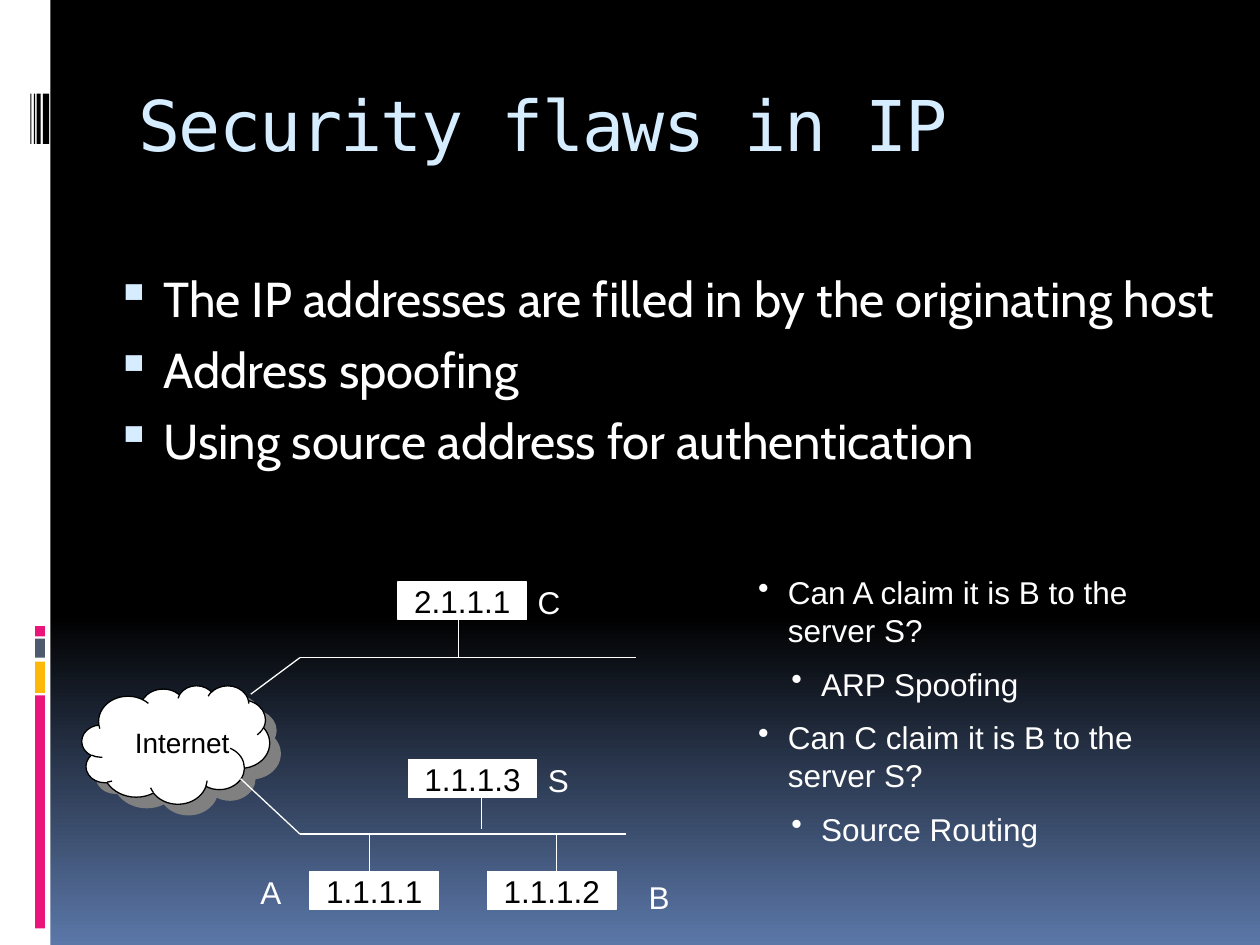
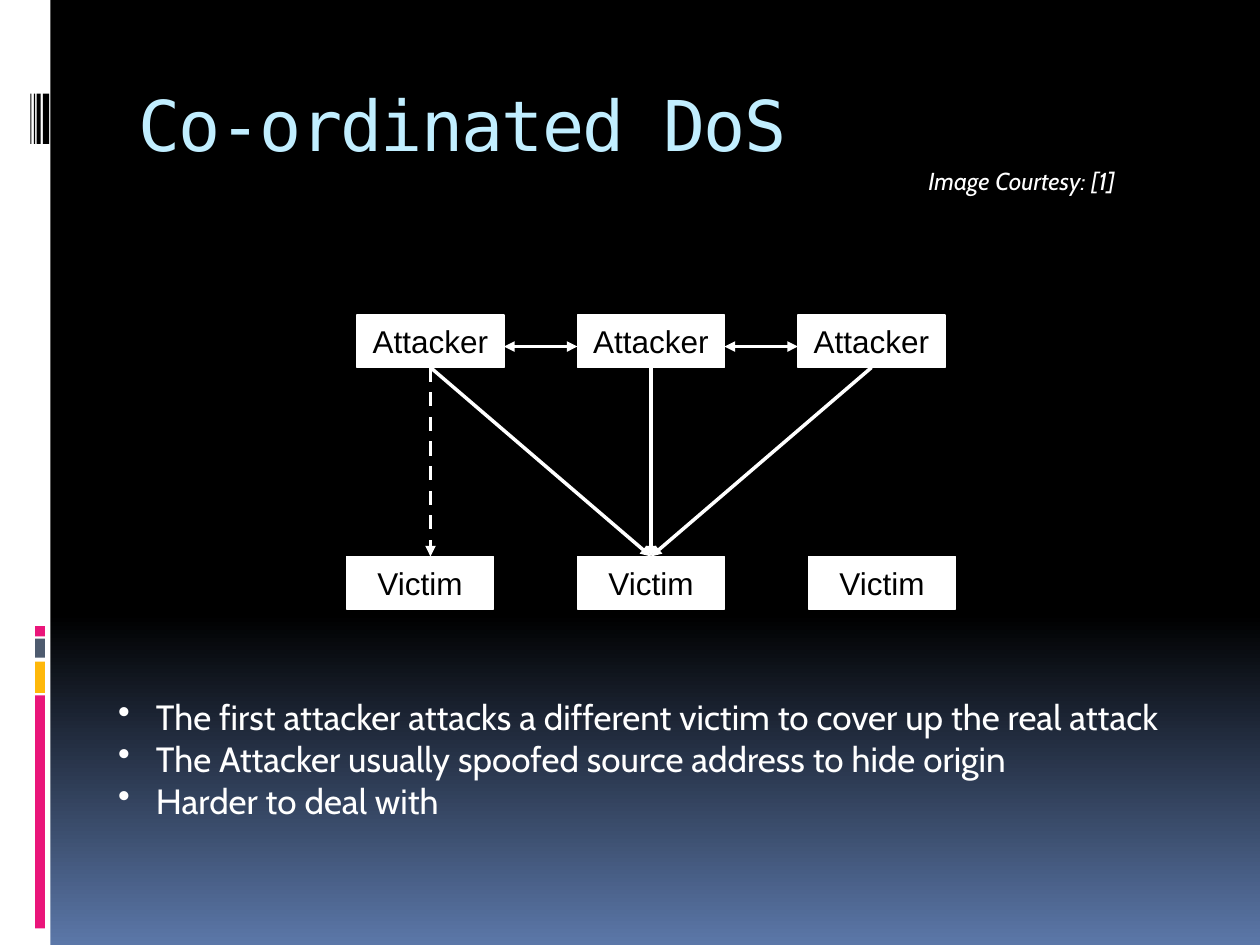
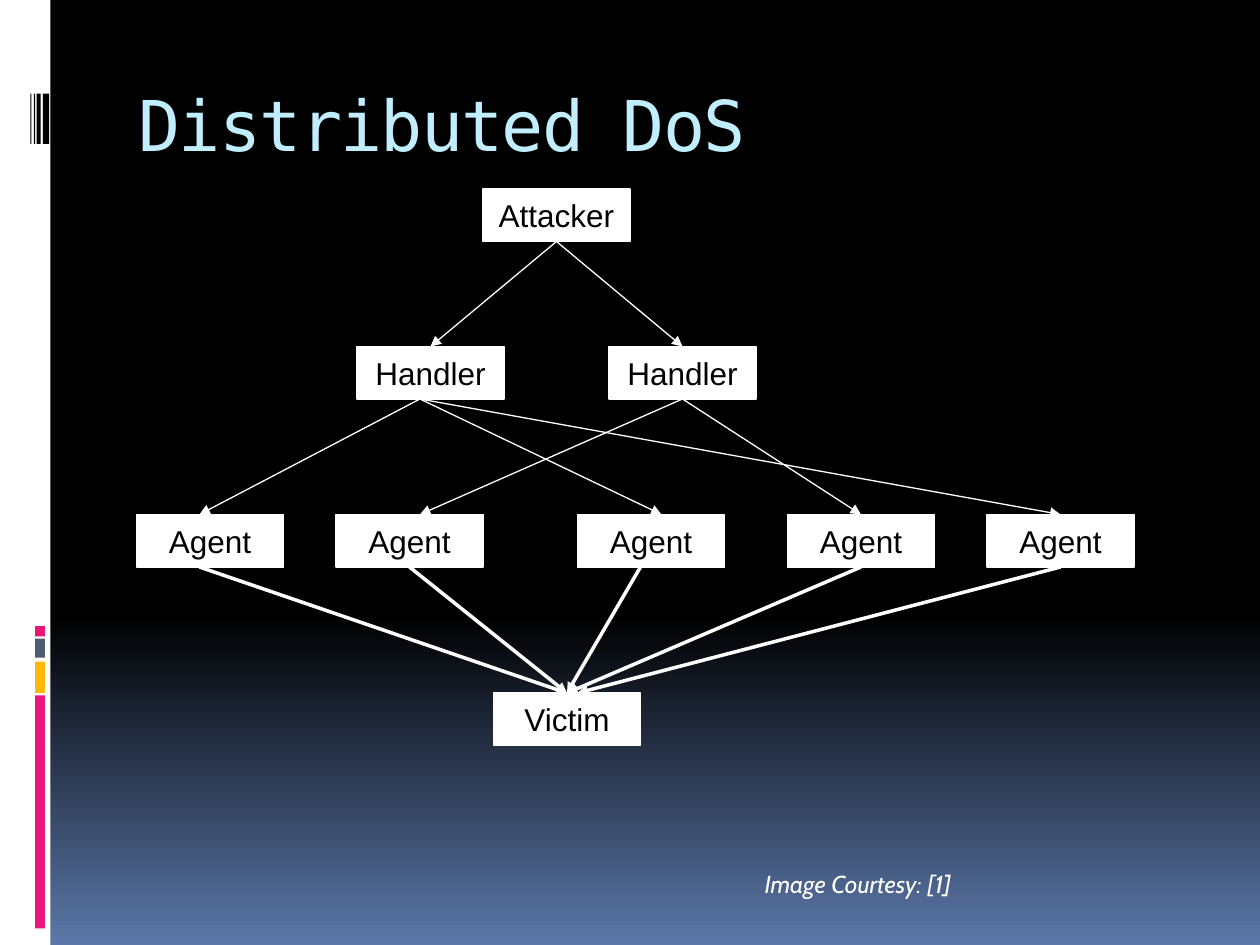
"""Build three slides on IP spoofing and denial-of-service attacks."""
from copy import deepcopy

from pptx import Presentation
from pptx import util as u
from pptx.dml.color import RGBColor
from pptx.enum import dml, shapes, text as t
from pptx.oxml import parse_xml
from pptx.oxml.ns import nsdecls, qn
from pptx.oxml.xmlchemy import OxmlElement

Pt = u.Pt
COLORS = {
    "white": "FFFFFF", "black": "000000", "blue": "5B77A8", "pink": "EA157A",
    "amber": "FEB80A", "slate": "4E5B6F", "ice": "D6ECFF", "sky": "C1EEFF",
    "gray": "808080",
}
RECTANGLE = shapes.MSO_SHAPE.RECTANGLE
NODE = {"fill": "white", "edge": "white", "color": "black", "middle": True,
        "align": t.PP_ALIGN.CENTER}
NODE_SIZE = (84, 30)


def write(page, words, left, top, width, height, box=None, form=RECTANGLE,
          fill=None, edge=None, font="Arial", size=18, color="white",
          italic=False, align=t.PP_ALIGN.LEFT, middle=False, tracking=None,
          bullet=None, bullet_color=None, margin=0, hang=0, step=0, levels=None,
          before=0):
    """Put formatted text in a given box, a filled shape or a new text box."""
    place = [Pt(length) for length in (left, top, width, height)]
    if box is not None:
        box.left, box.top, box.width, box.height = place
    elif fill:
        box = page.shapes.add_shape(form, *place)
        box.shadow.inherit = False
        box.fill.solid()
        box.fill.fore_color.rgb = RGBColor.from_string(COLORS[fill])
        if edge:
            box.line.color.rgb = RGBColor.from_string(COLORS[edge])
            box.line.width = Pt(0.75)
        else:
            box.line.fill.background()
    else:
        box = page.shapes.add_textbox(*place)
    frame = box.text_frame
    frame.word_wrap = True
    frame.auto_size = t.MSO_AUTO_SIZE.NONE
    frame.vertical_anchor = t.MSO_ANCHOR.MIDDLE if middle else t.MSO_ANCHOR.TOP
    for index, line in enumerate(words.split("\n") if words else []):
        para = frame.add_paragraph() if index else frame.paragraphs[0]
        para.alignment = align
        para.space_before = Pt(before)
        span = para.add_run()
        span.text = line
        span.font.name, span.font.size, span.font.italic = font, Pt(size), italic
        span.font.color.rgb = RGBColor.from_string(COLORS[color])
        if tracking:
            span.font._element.set("spc", str(tracking))
        if bullet:
            level = levels[index] if levels else 0
            properties = para._p.get_or_add_pPr()
            properties.set("marL", str(Pt(margin + level * step)))
            properties.set("indent", str(-Pt(hang)))
            if bullet_color:
                tint = OxmlElement("a:buClr")
                shade = OxmlElement("a:srgbClr")
                shade.set("val", COLORS[bullet_color])
                tint.append(shade)
                properties.append(tint)
            mark = OxmlElement("a:buChar")
            mark.set("char", bullet)
            properties.append(mark)
    return box


def link(page, start, end, width=0.75, tips=(), dashed=False):
    """Draw a line between points (x, y) or connection sites (box, site)."""
    points = [(0, 0) if hasattr(spot[0], "shape_type") else spot for spot in (start, end)]
    connector = page.shapes.add_connector(
        shapes.MSO_CONNECTOR.STRAIGHT, *[Pt(value) for point in points for value in point])
    if hasattr(start[0], "shape_type"):
        connector.begin_connect(*start)
    if hasattr(end[0], "shape_type"):
        connector.end_connect(*end)
    connector.line.color.rgb = RGBColor.from_string(COLORS["white"])
    connector.line.width = Pt(width)
    if dashed:
        connector.line.dash_style = dml.MSO_LINE.DASH
    properties = connector.element.spPr
    for tip in tips:
        arrow = OxmlElement(tip)
        arrow.set("type", "triangle")
        properties.find(qn("a:ln")).append(arrow)
    properties.append(OxmlElement("a:effectLst"))


deck = Presentation()
deck.slide_width, deck.slide_height = Pt(720), Pt(540)
layout = deck.slide_layouts[5]

backdrop = layout.background.fill
backdrop.gradient()
backdrop.gradient_angle = 270
stops = layout.background.element.find(".//" + qn("a:gsLst"))
stops.append(deepcopy(stops[0]))
for stop, (position, name) in zip(backdrop.gradient_stops,
                                  [(0, "black"), (0.65, "black"), (1, "blue")]):
    stop.position = position
    stop.color.rgb = RGBColor.from_string(COLORS[name])

pages = []
for heading, color in [("Security flaws in IP", "ice"), ("Co-ordinated DoS", "sky"),
                       ("Distributed DoS", "sky")]:
    page = deck.slides.add_slide(layout)
    write(page, heading, 72, 43, 612, 72, box=page.shapes.title,
          font="DejaVu Sans Mono", size=40, color=color, tracking=-100)
    pages.append(page)
flaws, coordinated, distributed = pages

bands = [
    ("white", 0, 0, 28.8, 540),
    ("pink", 20, 397.4, 5.7, 133.2), ("amber", 20, 378, 5.7, 18),
    ("slate", 20, 365, 5.7, 10.8), ("pink", 20, 357.8, 5.7, 5.8),
    ("black", 24.5, 53.5, 3.6, 28.8), ("black", 21, 53.5, 2.2, 28.8),
    ("black", 19.4, 53.5, 0.7, 28.8), ("black", 17.3, 53.5, 0.7, 28.8),
]
for number, (fill, *place) in enumerate(bands, 100):
    band = write(flaws, "", *place, fill=fill)
    band.element.nvSpPr.cNvPr.set("id", str(number))
    layout.shapes.element.append(band.element)

# Security flaws in IP
write(flaws, "The IP addresses are filled in by the originating host\n"
      "Address spoofing\nUsing source address for authentication",
      54, 150, 648, 183, font="Cabin", size=28, bullet="▪", bullet_color="ice",
      margin=32.4, hang=27.4, before=7)
cloud = write(flaws, "Internet", 46.8, 391.7, 107.3, 67.7, form=shapes.MSO_SHAPE.CLOUD,
              fill="white", edge="black", size=16, color="black", middle=True)
cloud.text_frame.margin_left, cloud.text_frame.margin_right = Pt(15.5), 0
cloud.element.spPr.find(qn("a:effectLst")).append(parse_xml(
    f'<a:outerShdw {nsdecls("a")} dist="{Pt(8.5)}" dir="2700000" algn="ctr" '
    f'rotWithShape="0"><a:srgbClr val="{COLORS["gray"]}"/></a:outerShdw>'))
for address, left, top, host, host_left, host_top in [
        ("2.1.1.1", 227.5, 332.6, "C", 300.2, 329.8),
        ("1.1.1.3", 233.3, 434.2, "S", 306, 431.3),
        ("1.1.1.1", 177.1, 498.2, "A", 141.8, 495.4),
        ("1.1.1.2", 278.6, 498.2, "B", 363.6, 498.2)]:
    write(flaws, address, left, top, 73.4, 21.6, **NODE)
    write(flaws, host, host_left, host_top, 28, 28.8)
for start, end in [
        ((171.4, 375.8), (363.6, 375.8)), ((171.4, 476.6), (357.8, 476.6)),
        ((171.4, 375.8), (143.3, 396.7)), ((137.5, 445), (171.4, 476.6)),
        ((262, 354.2), (262, 375.8)), ((275, 455.8), (275, 473.8)),
        ((211, 476.6), (211, 498.2)), ((318.2, 476.6), (318.2, 498.2))]:
    link(flaws, start, end)
write(flaws, "Can A claim it is B to the server S?\nARP Spoofing\n"
      "Can C claim it is B to the server S?\nSource Routing",
      426.2, 324, 264.2, 170, bullet="•", margin=17, hang=17, step=19,
      levels=(0, 1, 0, 1), before=9)

# Co-ordinated DoS
attackers = [write(coordinated, "Attacker", 204 + 126 * column, 180, *NODE_SIZE, **NODE)
             for column in range(3)]
victims = [write(coordinated, "Victim", 198 + 132 * column, 318, *NODE_SIZE, **NODE)
           for column in range(3)]
for attacker in attackers:
    link(coordinated, (attacker, 2), (victims[1], 0), width=2, tips=["a:tailEnd"])
for left in (288, 414):
    link(coordinated, (left, 198), (left + 42, 198), width=2,
         tips=["a:headEnd", "a:tailEnd"])
link(coordinated, (attackers[0], 2), (246, 318), width=2, tips=["a:tailEnd"], dashed=True)
write(coordinated, "The first attacker attacks a different victim to cover up the real attack\n"
      "The Attacker usually spoofed source address to hide origin\nHarder to deal with",
      60.5, 393.8, 635.8, 80, font="Cabin", size=20, bullet="•", margin=21.5, hang=21.5)

# Distributed DoS
attacker = write(distributed, "Attacker", 276, 108, *NODE_SIZE, **NODE)
handlers = [write(distributed, "Handler", left, 198, *NODE_SIZE, **NODE)
            for left in (204, 348)]
agents = [write(distributed, "Agent", left, 294, *NODE_SIZE, **NODE)
          for left in (78, 192, 330, 450, 564)]
victim = write(distributed, "Victim", 282, 396, *NODE_SIZE, **NODE)
for handler in handlers:
    link(distributed, (attacker, 2), (handler, 0), tips=["a:tailEnd"])
for start, end in [
        ((240, 228), (114, 294)), ((240, 228), (378, 294)),
        ((240, 228), (agents[4], 0)), ((handlers[1], 2), (240, 294)),
        ((handlers[1], 2), (agents[3], 0))]:
    link(distributed, start, end, tips=["a:tailEnd"])
for start, end in [
        ((114, 324), (victim, 0)), ((agents[1], 2), (victim, 0)),
        ((366, 324), (victim, 0)), ((agents[3], 2), (victim, 0)),
        ((agents[4], 2), (330, 396))]:
    link(distributed, start, end, width=2, tips=["a:tailEnd"])

for page, left, top in [(coordinated, 523.4, 91.4), (distributed, 429.8, 493.2)]:
    write(page, "Image Courtesy: [1]", left, top, 174.2, 24.5,
          font="Cabin", size=14, italic=True)

deck.save("out.pptx")
